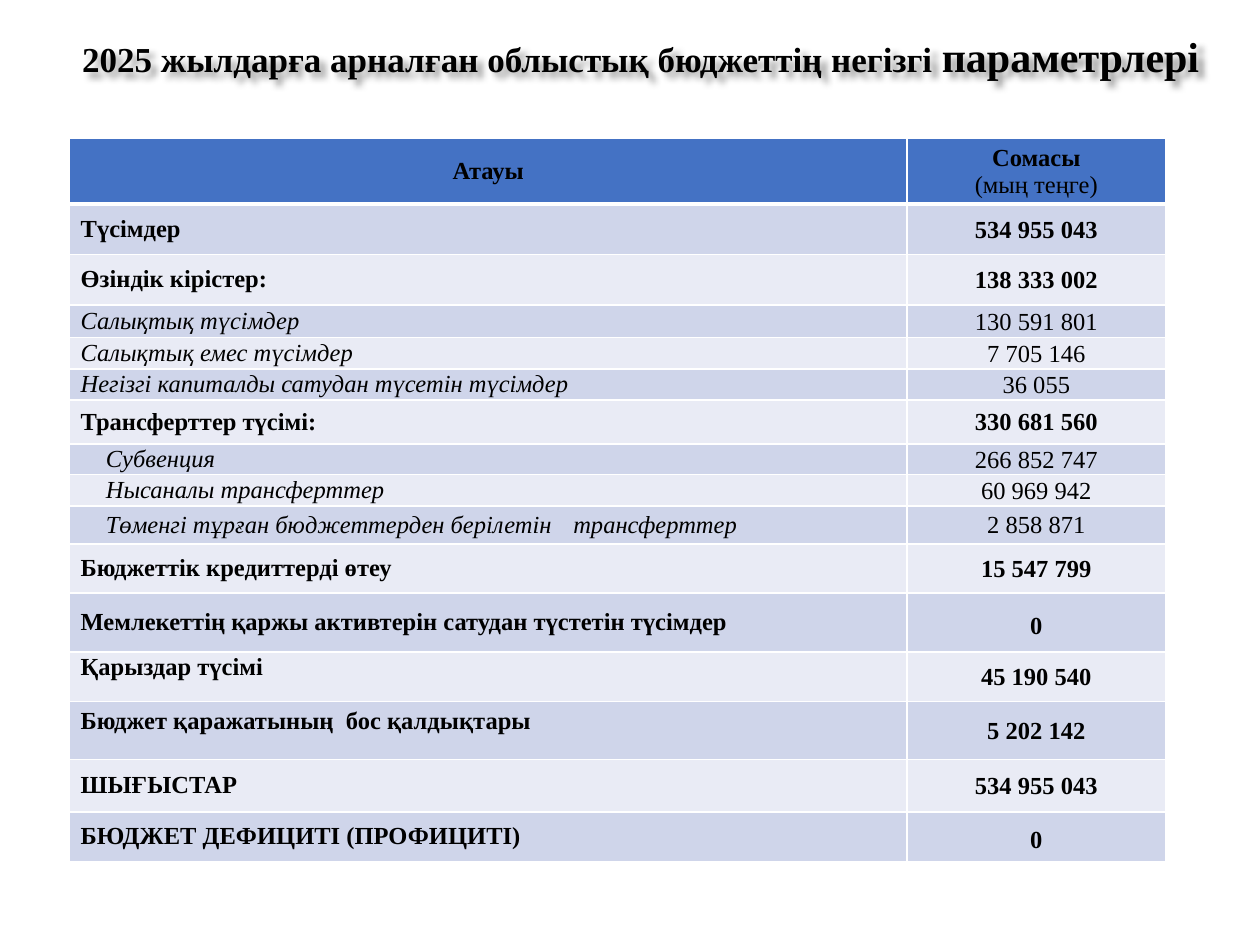
from dataclasses import dataclass

from lxml.etree import SubElement
from pptx import Presentation
from pptx.dml.color import RGBColor as RGB
from pptx.enum.text import MSO_ANCHOR as ANCHOR, MSO_AUTO_SIZE as AUTO, PP_ALIGN as ALIGN
from pptx.oxml.ns import qn
from pptx.util import Inches, Pt


@dataclass(frozen=True)
class Theme:
    font: str = "Times New Roman"
    ink: str = "000000"
    line: str = "FFFFFF"
    head: str = "4472C4"
    bands: tuple = ("E9EBF5", "CFD5EA")
    title: int = 20
    title_big: int = 24
    body: int = 14
    thin: int = 1
    thick: int = 3


THEME = Theme()
COLS, ROWS = 100, 75
COL_WIDTHS = (66.5, 20.5)
HEAD_ROW = 5.2
INDENTS = {"total": 0.9, "item": 0.9, "sub": 2.9}
LIFTED = (0, 0, 0, 1.5)
TIGHT = (0.1, 0.1, 0.1, 0)
BUDGET = [
    ("total", "Түсімдер", "534 955 043", 4),
    ("total", "Өзіндік кірістер:", "138 333 002", 4),
    ("item", "Салықтық түсімдер", "130 591 801", 2.6),
    ("item", "Салықтық емес түсімдер", "7 705 146", 2.5),
    ("item", "Негізгі капиталды сатудан түсетін түсімдер", "36\u00a0055", 2.4),
    ("total", "Трансферттер түсімі:", "330 681 560", 3.5),
    ("sub", "Субвенция", "266 852 747", 2.4),
    ("sub", "Нысаналы трансферттер", "60 969 942", 2.5),
    ("sub", "Төменгі тұрған бюджеттерден берілетін\tтрансферттер", "2 858 871", 3),
    ("total", "Бюджеттік кредиттерді өтеу", "15 547 799", 3.9),
    ("total", "Мемлекеттің қаржы активтерін сатудан түстетін түсімдер", "0", 4.7),
    ("total", "Қарыздар түсімі", "45 190 540", 3.9),
    ("total", "Бюджет қаражатының  бос қалдықтары", "5 202 142", 4.6),
    ("total", "ШЫҒЫСТАР", "534 955 043", 4.2),
    ("total", "БЮДЖЕТ ДЕФИЦИТІ (ПРОФИЦИТІ)", "0", 3.9),
]
INSETS = {"Қарыздар түсімі": LIFTED, "Бюджет қаражатының  бос қалдықтары": LIFTED,
          "0": (0, 0.5, 0, 0)}


def write(p, text, size=THEME.body, bold=False, italic=False, align=ALIGN.LEFT, indent=0):
    """Add a formatted run to a paragraph."""
    p.alignment = align
    if indent:
        p._p.get_or_add_pPr().set("indent", str(int(indent)))
    r = p.add_run()
    r.text = text
    r.font.name, r.font.size = THEME.font, Pt(size)
    r.font.bold, r.font.italic = bold, italic
    r.font.color.rgb = RGB.from_string(THEME.ink)


class Deck:
    """Hold the style, the presentation and the current slide."""

    def __init__(self, theme):
        """Start a presentation with one blank slide."""
        self.theme = theme
        self.prs = Presentation()
        self.prs.slide_width, self.prs.slide_height = Inches(10), Inches(7.5)
        self.s = self.prs.slides.add_slide(self.prs.slide_layouts[6])

    def x(self, cols):
        """Turn grid columns into a length."""
        return int(self.prs.slide_width * cols / COLS)

    def y(self, rows):
        """Turn grid rows into a length."""
        return int(self.prs.slide_height * rows / ROWS)

    def title(self, left, top, width, height, parts):
        """Add a centred heading with a soft shadow."""
        sp = self.s.shapes.add_textbox(self.x(left), self.y(top), self.x(width), self.y(height))
        tf = sp.text_frame
        tf.word_wrap, tf.auto_size = True, AUTO.SHAPE_TO_FIT_TEXT
        for text, size in parts:
            write(tf.paragraphs[0], text, size, bold=True, align=ALIGN.CENTER, indent=self.x(3.7))
        effects = SubElement(sp._element.spPr, qn("a:effectLst"))
        shadow = SubElement(effects, qn("a:outerShdw"), blurRad="50800", dist="50800", dir="2700000")
        color = SubElement(shadow, qn("a:srgbClr"), val=self.theme.ink)
        SubElement(color, qn("a:alpha"), val="40000")

    def table(self, left, top, widths, heights):
        """Add a table with the given column widths and row heights."""
        tbl = self.s.shapes.add_table(len(heights), len(widths), self.x(left), self.y(top),
                                      self.x(sum(widths)), self.y(sum(heights))).table
        for column, width in zip(tbl.columns, widths):
            column.width = self.x(width)
        for row, height in zip(tbl.rows, heights):
            row.height = self.y(height)
        return tbl

    def cell(self, cell, fill, insets=(0, 0, 0, 0), top=THEME.thin, bottom=THEME.thin):
        """Style a cell and return its first paragraph."""
        tc_pr = cell._tc.get_or_add_tcPr()
        thin = self.theme.thin
        for side, width in (("L", thin), ("R", thin), ("T", top), ("B", bottom)):
            ln = SubElement(tc_pr, qn(f"a:ln{side}"), w=str(Pt(width)))
            SubElement(SubElement(ln, qn("a:solidFill")), qn("a:srgbClr"), val=self.theme.line)
        cell.fill.solid()
        cell.fill.fore_color.rgb = RGB.from_string(fill)
        cell.vertical_anchor = ANCHOR.MIDDLE
        cell.margin_left, cell.margin_right = self.x(insets[0]), self.x(insets[2])
        cell.margin_top, cell.margin_bottom = self.y(insets[1]), self.y(insets[3])
        return cell.text_frame.paragraphs[0]

    def tab_stop(self, p, cols):
        """Set one left tab stop on a paragraph."""
        stops = SubElement(p._p.get_or_add_pPr(), qn("a:tabLst"))
        SubElement(stops, qn("a:tab"), pos=str(self.x(cols)), algn="l")


def main():
    """Build the budget slide."""
    deck = Deck(THEME)
    deck.title(1.7, 1.9, 94.6, 5, [
        ("2025 жылдарға арналған облыстық бюджеттің негізгі ", THEME.title),
        ("параметрлері", THEME.title_big)])
    tbl = deck.table(5.5, 11, COL_WIDTHS, [HEAD_ROW] + [row[-1] for row in BUDGET])

    name, amount = (deck.cell(tbl.cell(0, c), THEME.head, bottom=THEME.thick) for c in range(2))
    write(name, "Атауы", bold=True, align=ALIGN.CENTER)
    write(amount, "Сомасы", bold=True, align=ALIGN.CENTER)
    write(tbl.cell(0, 1).text_frame.add_paragraph(), "(мың теңге)", align=ALIGN.CENTER)

    for i, (kind, label, value, _) in enumerate(BUDGET, 1):
        fill, bold = THEME.bands[i % 2], kind == "total"
        top = THEME.thick if i == 1 else THEME.thin
        p = deck.cell(tbl.cell(i, 0), fill, INSETS.get(label, (0, 0, 0, 0)), top)
        if "\t" in label:
            deck.tab_stop(p, 40.2)
        write(p, label, bold=bold, italic=not bold, indent=deck.x(INDENTS[kind]))
        p = deck.cell(tbl.cell(i, 1), fill, INSETS.get(value, TIGHT), top)
        write(p, value, bold=bold, align=ALIGN.CENTER)
    deck.prs.save("out.pptx")


if __name__ == "__main__":
    main()
